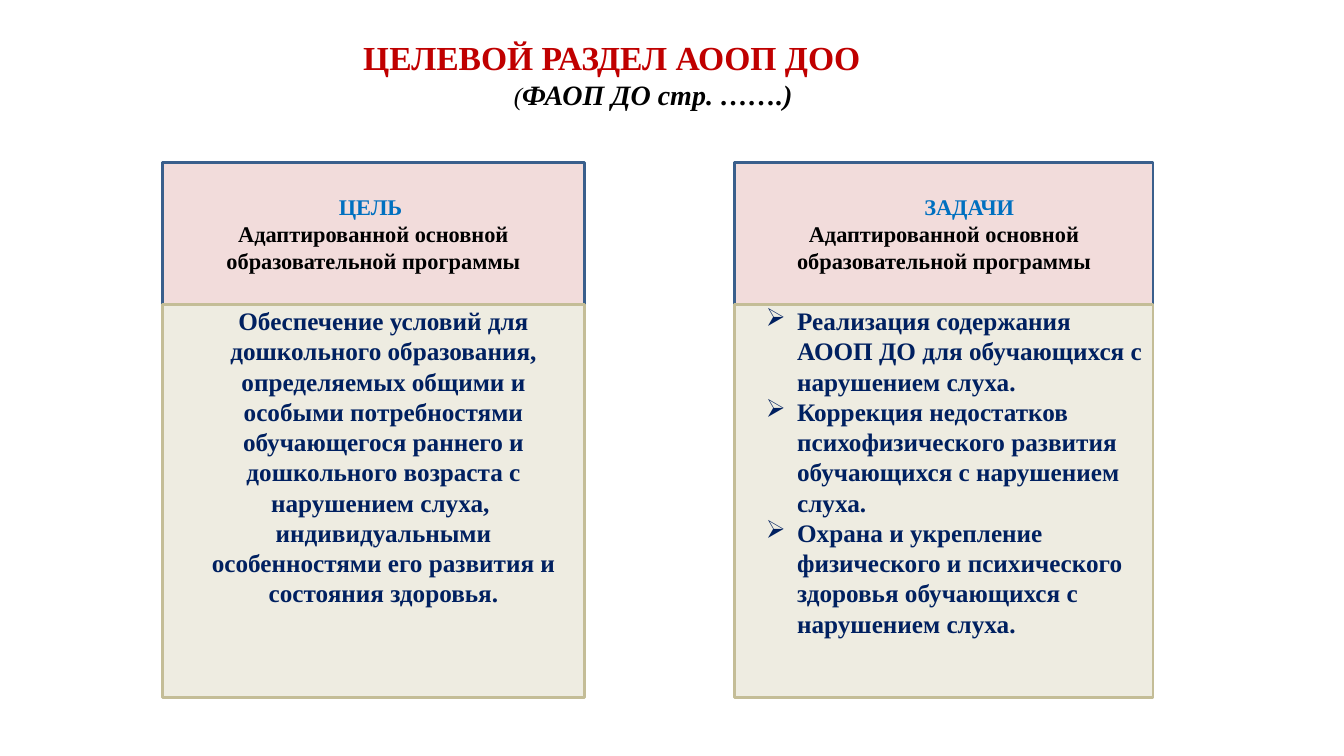
from pptx import Presentation
from pptx.dml.color import RGBColor as RGB
from pptx.enum.shapes import MSO_SHAPE as SHAPE
from pptx.enum.text import MSO_ANCHOR as ANCHOR, PP_ALIGN as ALIGN
from pptx.oxml.ns import qn
from pptx.util import Cm, Pt
from lxml.etree import SubElement

COLORS = {
    "red": "C00000", "black": "000000", "blue": "0070C0", "navy": "002060",
    "pink": "F2DCDB", "steel": "3A5F8C", "cream": "EEECE1", "sand": "C4BD97",
}
FONT = "Times New Roman"
TOP, HEAD, BODY = 4.09, 3.58, 9.91  # top of the columns, heights of their parts
SUBJECT = "Адаптированной основной образовательной программы"
GOAL = [
    "Обеспечение условий для дошкольного образования, определяемых общими "
    "и особыми потребностями обучающегося раннего и дошкольного возраста "
    "с нарушением слуха, ",
    "индивидуальными особенностями его развития и состояния здоровья.",
]
TASKS = [
    "Реализация содержания АООП ДО для обучающихся с нарушением слуха.",
    "Коррекция недостатков психофизического развития обучающихся "
    "с нарушением слуха.",
    "Охрана и укрепление физического и психического здоровья обучающихся "
    "с нарушением слуха.",
]


def color(name):
    return RGB.from_string(COLORS[name])


def add_run(para, text, size, tint, **style):
    run = para.add_run()
    run.text = text
    form = {"name": FONT, "size": Pt(size), "bold": True, **style}
    for key, value in form.items():
        setattr(run.font, key, value)
    run.font.color.rgb = color(tint)


def set_para(para, align, left=0, hang=0, mark=None):
    para.alignment = align
    props = para._p.get_or_add_pPr()
    props.set("marL", str(Cm(left)))
    props.set("indent", str(Cm(-hang)))
    if mark:
        SubElement(props, qn("a:buChar")).set("char", mark)


def add_paras(frame, count):
    return [frame.paragraphs[0]] + [frame.add_paragraph() for _ in range(count - 1)]


def add_label(slide, left, top, width, height, align):
    box = slide.shapes.add_textbox(Cm(left), Cm(top), Cm(width), Cm(height))
    box.text_frame.word_wrap = False
    para = box.text_frame.paragraphs[0]
    para.alignment = align
    return para


def add_panel(slide, left, top, width, height, fill, line):
    panel = slide.shapes.add_shape(
        SHAPE.RECTANGLE, Cm(left), Cm(top), Cm(width), Cm(height))
    panel.shadow.inherit = False
    panel.fill.solid()
    panel.fill.fore_color.rgb = color(fill)
    panel.line.color.rgb = color(line)
    panel.line.width = Pt(2)
    panel.text_frame.word_wrap = True
    return panel.text_frame


def add_column(slide, left, width, title, shift, texts, form):
    # Heading
    frame = add_panel(slide, left, TOP, width, HEAD, "pink", "steel")
    frame.vertical_anchor = ANCHOR.MIDDLE
    first, second = add_paras(frame, 2)
    set_para(first, ALIGN.CENTER, shift)
    add_run(first, title, 16, "blue")
    set_para(second, ALIGN.CENTER)
    add_run(second, SUBJECT, 16, "black")

    # Body
    frame = add_panel(slide, left, TOP + HEAD, width, BODY, "cream", "sand")
    frame.vertical_anchor = ANCHOR.TOP
    frame.margin_top = Cm(0.03)
    for para, text in zip(add_paras(frame, len(texts)), texts):
        set_para(para, **form)
        add_run(para, text, 18, "navy")


def main():
    deck = Presentation()
    deck.slide_width, deck.slide_height = Cm(33.87), Cm(19.05)
    slide = deck.slides.add_slide(deck.slide_layouts[6])

    # Title and subtitle
    title = add_label(slide, 8.84, 0.81, 13.16, 1.27, ALIGN.CENTER)
    add_run(title, "ЦЕЛЕВОЙ РАЗДЕЛ АООП ДОО", 24, "red")
    note = add_label(slide, 12.7, 1.83, 7.59, 1.12, ALIGN.LEFT)
    add_run(note, "(", 18, "black", bold=False, italic=True)
    add_run(note, "ФАОП ДО стр. …….)", 20, "black", italic=True)

    # Goal and tasks
    add_column(slide, 4.09, 10.64, "ЦЕЛЬ ", 0, GOAL,
               {"align": ALIGN.CENTER, "left": 0.51})
    add_column(slide, 18.52, 10.54, "ЗАДАЧИ", 1.27, TASKS,
               {"align": ALIGN.LEFT, "left": 1.32, "hang": 0.79, "mark": "➢"})

    deck.save("out.pptx")


if __name__ == "__main__":
    main()
